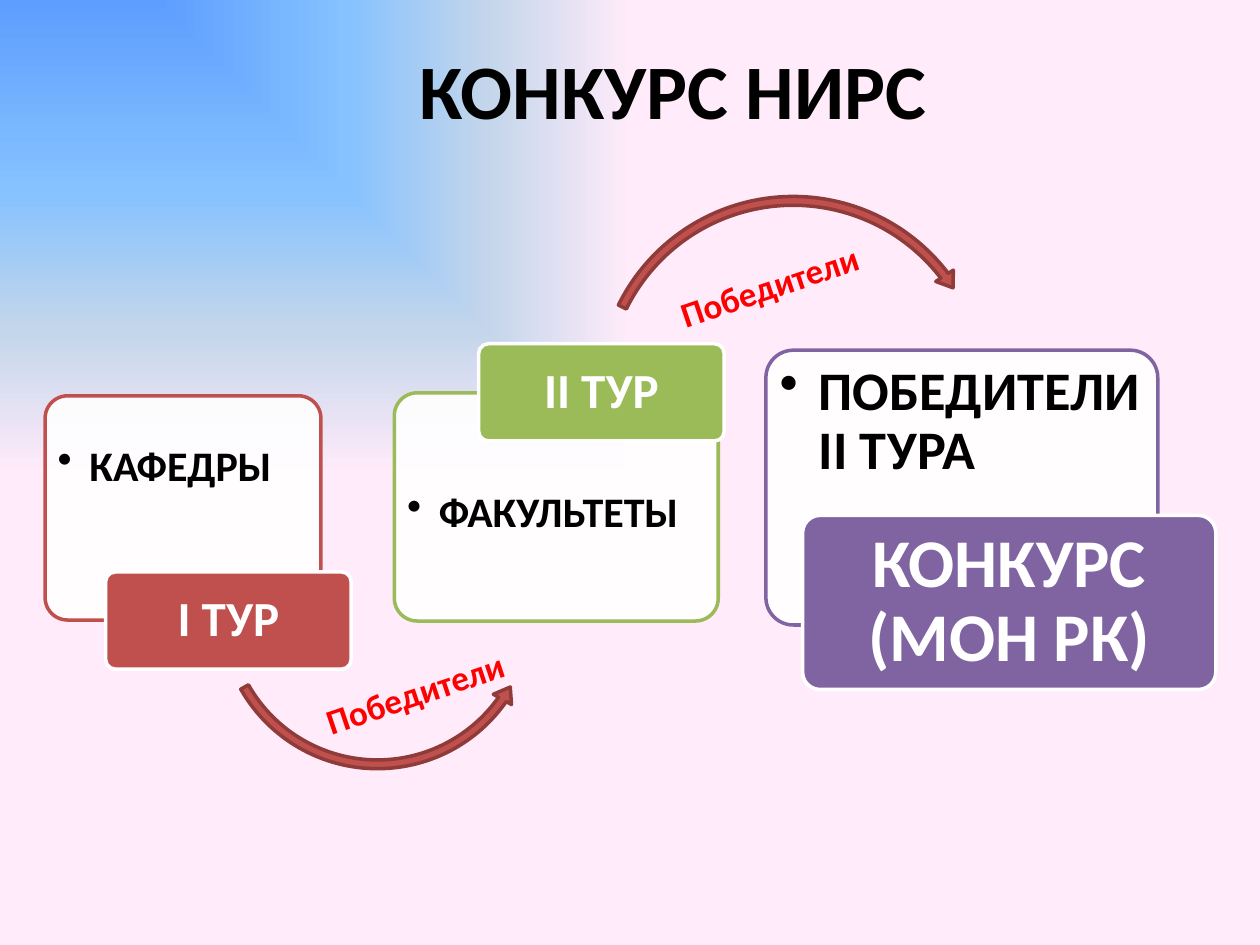
from lxml import etree
from pptx import Presentation
from pptx import util as u
from pptx.dml.color import RGBColor
from pptx.enum import shapes, text
from pptx.oxml import parse_xml
from pptx.oxml.ns import nsdecls, qn

FONT = "Calibri"
KIND = shapes.MSO_SHAPE if hasattr(shapes, "MSO_SHAPE") else shapes.MSO_AUTO_SHAPE_TYPE
ALIGN, ANCHOR = text.PP_ALIGN, text.MSO_ANCHOR

TITLE = ("КОНКУРС НИРС ", (7.11, 0.74, 13.26, 2.62))
STOPS = [(0, "5E9EFF"), (40, "85C2FF"), (70, "C4D6EB"), (100, "FFEBFA")]
CARDS = [
    dict(hue="C0504D", box=(0.91, 7.98, 5.56, 4.52), item="КАФЕДРЫ", size=24,
         lead=0.85, hang=0.64, up=False,
         tag="I ТУР", spot=(2.13, 11.53, 4.95, 1.96), big=28),
    dict(hue="9BBB59", box=(7.95, 7.92, 6.53, 4.6), item="ФАКУЛЬТЕТЫ", size=24,
         lead=0.85, hang=0.64, up=True,
         tag="II ТУР", spot=(9.65, 6.93, 4.95, 1.96), big=28),
    dict(hue="8064A2", box=(15.44, 7.06, 7.9, 5.54), item="ПОБЕДИТЕЛИ II ТУРА", size=31,
         lead=0, hang=0.79, up=False,
         tag="КОНКУРС (МОН РК)", spot=(16.18, 10.39, 8.33, 3.51), big=39),
]
ARROWS = [
    (KIND.LEFT_CIRCULAR_ARROW, (4.32, 9.04, 6.58, 6.58), (0.027, 3.308, 21.063, 90.245, 0.032)),
    (KIND.CIRCULAR_ARROW, (11.94, 3.84, 8.1, 8.1), (0.022, 2.657, 193.597, 123.765, 0.026)),
]
LABELS = [(6.17, 13.41, 4.39, 1.12), (13.36, 5.18, 4.45, 1.12)]


def rgb(code):
    return RGBColor.from_string(code)


def cms(box):
    return [u.Cm(n) for n in box]


def inset(box, gap):
    x, y, w, h = box
    return x + gap, y + gap, w - 2 * gap, h - 2 * gap


def paint(slide):
    slide.background.fill.gradient()
    old = slide.element.find(".//" + qn("a:gradFill"))
    stops = "".join(f'<a:gs pos="{pos * 1000}"><a:srgbClr val="{hue}"/></a:gs>'
                    for pos, hue in STOPS)
    new = parse_xml(f'<a:gradFill {nsdecls("a")} rotWithShape="1"><a:gsLst>{stops}</a:gsLst>'
                    '<a:path path="rect"><a:fillToRect r="100000" b="100000"/></a:path>'
                    '</a:gradFill>')
    old.getparent().replace(old, new)


def draw(slide, kind, box, fill, line, adj, alpha=None):
    shape = slide.shapes.add_shape(kind, *cms(box))
    shape.shadow.inherit = False
    shape.fill.solid()
    shape.fill.fore_color.rgb = rgb(fill)
    shape.line.color.rgb = rgb(line)
    shape.line.width = u.Pt(2)
    for i, val in enumerate(adj):
        shape.adjustments[i] = val
    if alpha:
        hue = shape.fill._xPr.find(".//" + qn("a:srgbClr"))
        etree.SubElement(hue, qn("a:alpha")).set("val", str(alpha * 1000))


def write(shape, words, size, hue, align=ALIGN.CENTER, anchor=ANCHOR.TOP, pad=None, wrap=True):
    frame = shape.text_frame
    frame.word_wrap = wrap
    frame.vertical_anchor = anchor
    if pad:
        (frame.margin_left, frame.margin_top,
         frame.margin_right, frame.margin_bottom) = cms(pad)
    para = frame.paragraphs[0]
    para.alignment = align
    run = para.add_run()
    run.text = words
    font = run.font
    font.name, font.size, font.bold = FONT, u.Pt(size), True
    font.color.rgb = rgb(hue)
    return para


def bullet(para, hang):
    props = para._p.get_or_add_pPr()
    props.set("marL", str(u.Cm(hang)))
    props.set("indent", str(-u.Cm(hang)))
    etree.SubElement(props, qn("a:buChar")).set("char", "•")


def card(slide, data):
    box, spot = data["box"], data["spot"]
    draw(slide, KIND.ROUNDED_RECTANGLE, box, "FFFFFF", data["hue"], [0.1], 90)
    x, y, w, h = box
    gap = 0.023 * h
    top = y + (0.24 * h if data["up"] else gap)
    body = slide.shapes.add_textbox(*cms((x + gap, top, w - 2 * gap, 0.74 * h)))
    para = write(body, data["item"], data["size"], "000000", ALIGN.LEFT,
                 pad=(0.15, 0.15 + data["lead"], 0.15, 0.15))
    para.line_spacing = 0.9
    bullet(para, data["hang"])


def tag(slide, data):
    spot = data["spot"]
    draw(slide, KIND.ROUNDED_RECTANGLE, spot, data["hue"], "FFFFFF", [0.1])
    name = slide.shapes.add_textbox(*cms(inset(spot, 0.03 * spot[3])))
    para = write(name, data["tag"], data["big"], "FFFFFF", anchor=ANCHOR.MIDDLE,
                 pad=(0.15, 0.1, 0.15, 0.1))
    para.line_spacing = 0.9


def main():
    deck = Presentation()
    deck.slide_width, deck.slide_height = u.Cm(25.4), u.Cm(19.05)
    slide = deck.slides.add_slide(deck.slide_layouts[5])
    paint(slide)
    words, box = TITLE
    title = slide.shapes.title
    title.left, title.top, title.width, title.height = cms(box)
    write(title, words, 44, "000000")
    for i, data in enumerate(CARDS):
        card(slide, data)
        if i < len(ARROWS):
            kind, place, adj = ARROWS[i]
            draw(slide, kind, place, "C0504D", "8E3B39", adj)
        tag(slide, data)
    for place in LABELS:
        label = slide.shapes.add_textbox(*cms(place))
        label.rotation = 341.4
        write(label, "Победители ", 20, "FF0000", wrap=False)
        label.text_frame.auto_size = text.MSO_AUTO_SIZE.SHAPE_TO_FIT_TEXT
    deck.save("out.pptx")


if __name__ == "__main__":
    main()
